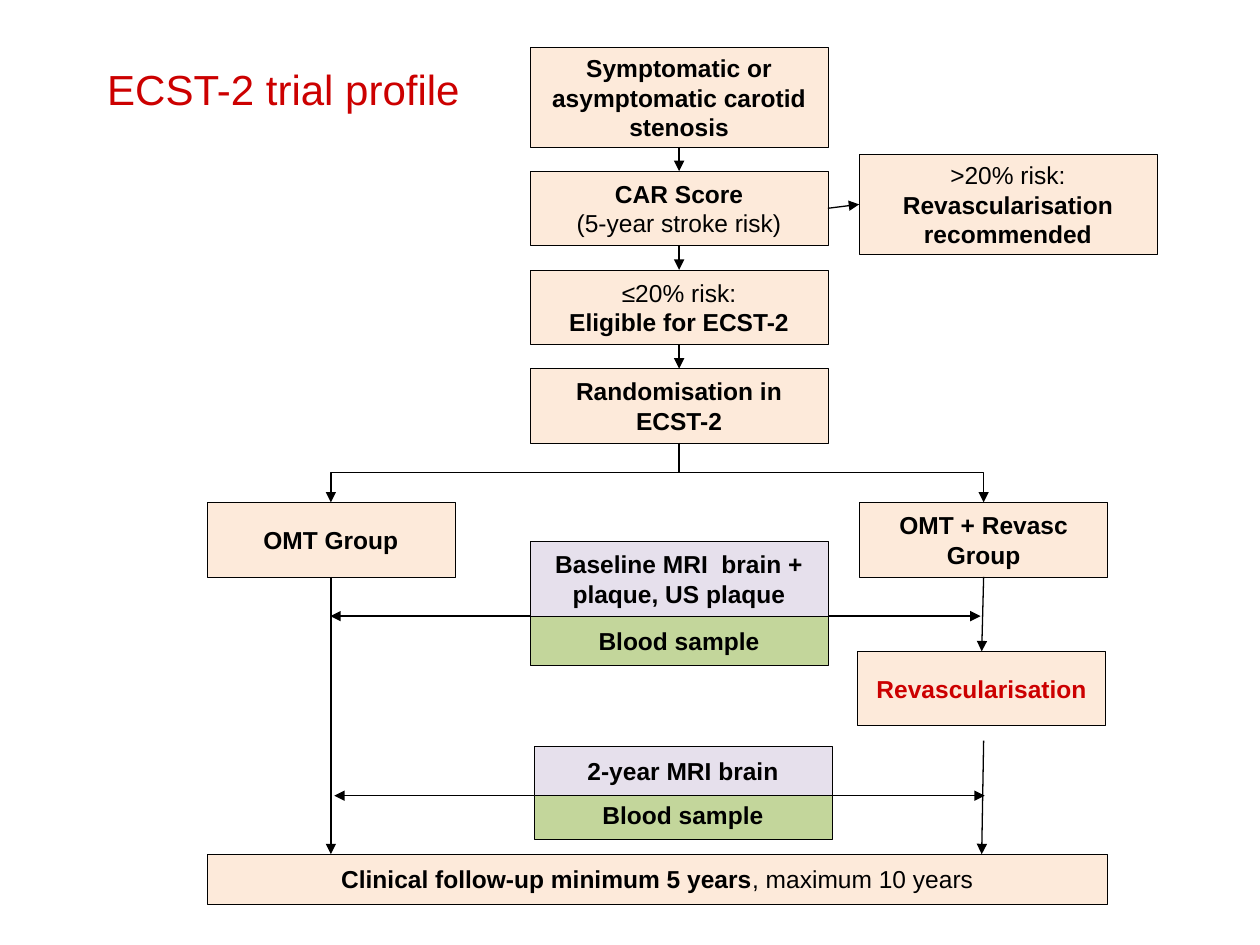
from dataclasses import dataclass

from lxml.etree import SubElement
from pptx import Presentation
from pptx.dml.color import RGBColor
from pptx.enum.shapes import MSO_CONNECTOR, MSO_SHAPE
from pptx.enum.text import MSO_ANCHOR, MSO_AUTO_SIZE, PP_ALIGN
from pptx.oxml.ns import qn
from pptx.util import Cm, Pt


@dataclass(frozen=True)
class Theme:
    """Colours, font and type sizes of the slide."""
    font: str = "Arial"
    title_size: int = 24
    body_size: int = 14
    box_line: float = 0.25
    arrow_line: float = 0.75
    ink: str = "000000"
    accent: str = "CC0000"
    step: str = "FDEADA"
    scan: str = "E6E0EC"
    sample: str = "C3D69B"


@dataclass(frozen=True)
class Box:
    """A rectangle in centimetres."""
    left: float
    top: float
    width: float
    height: float

    @property
    def right(self):
        """Return the right edge."""
        return self.left + self.width

    @property
    def bottom(self):
        """Return the lower edge."""
        return self.top + self.height

    @property
    def center(self):
        """Return the horizontal centre."""
        return self.left + self.width / 2

    @property
    def middle(self):
        """Return the vertical centre."""
        return self.top + self.height / 2

    def lengths(self):
        """Return left, top, width and height as slide lengths."""
        return [Cm(v) for v in (self.left, self.top, self.width, self.height)]


THEME = Theme()


def add_run(p, text, size, color, bold=False):
    """Add one formatted run to a paragraph."""
    r = p.add_run()
    r.text = text
    r.font.name = THEME.font
    r.font.size = Pt(size)
    r.font.bold = bold
    r.font.color.rgb = RGBColor.from_string(color)


def add_process(slide, box, paragraphs, fill=THEME.step, color=THEME.ink):
    """Draw a flow chart box from paragraphs of (text, bold) runs."""
    sp = slide.shapes.add_shape(MSO_SHAPE.FLOWCHART_PROCESS, *box.lengths())
    sp.shadow.inherit = False
    sp.fill.solid()
    sp.fill.fore_color.rgb = RGBColor.from_string(fill)
    sp.line.color.rgb = RGBColor.from_string(THEME.ink)
    sp.line.width = Pt(THEME.box_line)
    tf = sp.text_frame
    tf.word_wrap = True
    tf.vertical_anchor = MSO_ANCHOR.MIDDLE
    for i, runs in enumerate(paragraphs):
        p = tf.add_paragraph() if i else tf.paragraphs[0]
        p.alignment = PP_ALIGN.CENTER
        for text, bold in runs:
            add_run(p, text, THEME.body_size, color, bold)


def add_arrow(slide, x1, y1, x2, y2, kind=MSO_CONNECTOR.STRAIGHT):
    """Draw a connector with an arrowhead at its end."""
    cxn = slide.shapes.add_connector(kind, Cm(x1), Cm(y1), Cm(x2), Cm(y2))
    cxn.line.color.rgb = RGBColor.from_string(THEME.ink)
    cxn.line.width = Pt(THEME.arrow_line)
    SubElement(cxn.line._get_or_add_ln(), qn("a:tailEnd"), type="triangle")
    SubElement(cxn._element.spPr, qn("a:effectLst"))
    return cxn


def add_branch(slide, x1, y1, x2, y2):
    """Draw an elbow arrow that leaves and arrives vertically."""
    cx, cy = (x1 + x2) / 2, (y1 + y2) / 2
    span = abs(x2 - x1) / 2
    side = (y2 - y1) / 2 if x2 < x1 else (y1 - y2) / 2
    cxn = add_arrow(slide, cx - side, cy - span, cx + side, cy + span, MSO_CONNECTOR.ELBOW)
    degrees = 90 if x2 < x1 else 270
    cxn._element.spPr.find(qn("a:xfrm")).set("rot", str(degrees * 60000))


def add_title(slide, box, text):
    """Place and format the title placeholder."""
    sp = slide.shapes.title
    sp.left, sp.top, sp.width, sp.height = box.lengths()
    tf = sp.text_frame
    tf.word_wrap = True
    tf.auto_size = MSO_AUTO_SIZE.NONE
    tf.vertical_anchor = MSO_ANCHOR.TOP
    tf.margin_left = tf.margin_right = tf.margin_top = tf.margin_bottom = 0
    p = tf.paragraphs[0]
    p.alignment = PP_ALIGN.CENTER
    p.line_spacing = 0.9
    add_run(p, text, THEME.title_size, THEME.accent)


def add_screening(slide, box):
    """Draw the column from presentation to randomisation, with its side exit."""
    steps = [
        (2, [[("Symptomatic or asymptomatic carotid stenosis", True)]]),
        (1.5, [[("CAR Score", True)], [("(5-year stroke risk)", False)]]),
        (1.5, [[("≤20% risk:", False)], [("Eligible for ECST-2", True)]]),
        (1.5, [[("Randomisation in ECST-2", True)]]),
    ]
    gap = (box.height - sum(height for height, _ in steps)) / (len(steps) - 1)
    top, cells = box.top, []
    for height, paragraphs in steps:
        cell = Box(box.left, top, box.width, height)
        add_process(slide, cell, paragraphs)
        if cells:
            add_arrow(slide, box.center, cells[-1].bottom, box.center, top)
        cells.append(cell)
        top = cell.bottom + gap
    score = cells[1]
    leave = Box(box.right + 0.63, box.top + 2.16, box.width, 2)
    add_process(slide, leave, [[(">20% risk: ", False), ("Revascularisation recommended", True)]])
    add_arrow(slide, score.right, score.middle, leave.left, leave.middle)


def add_arms(slide, box):
    """Draw the two treatment arms between randomisation and follow-up."""
    width, height = 5, 1.5
    omt = Box(box.left, box.top + 1.2, width, height)
    revasc = Box(box.right - width, omt.top, width, height)
    treatment = Box(revasc.left - 0.04, box.top + 4.2, width, height)
    for arm, name in ((omt, "OMT Group"), (revasc, "OMT + Revasc Group")):
        add_process(slide, arm, [[(name, True)]])
        add_branch(slide, box.left + 9.52, box.top, arm.center, arm.top)
    add_process(slide, treatment, [[("Revascularisation", True)]], color=THEME.accent)
    add_arrow(slide, omt.center, omt.bottom, omt.center, box.bottom)
    add_arrow(slide, revasc.center, revasc.bottom, treatment.center, treatment.top)
    add_arrow(slide, revasc.center, treatment.bottom + 0.3, treatment.center, box.bottom)


def add_assessment(slide, box, scan, scan_height):
    """Draw a scan above a blood sample, with arrows to both arms."""
    y = box.top + scan_height
    add_arrow(slide, box.left, y, box.left - 4.03, y)
    add_arrow(slide, box.right, y, box.right + 3.08, y)
    sample = Box(box.left, box.bottom - 1, box.width, 1)
    add_process(slide, sample, [[("Blood sample", True)]], THEME.sample)
    upper = Box(box.left, box.top, box.width, scan_height)
    add_process(slide, upper, [[(scan, True)]], THEME.scan)


def add_follow_up(slide, box):
    """Draw the closing follow-up bar."""
    runs = [("Clinical follow-up minimum 5 years", True), (", maximum 10 years", False)]
    add_process(slide, box, [runs])


def main():
    """Build the slide and save it."""
    prs = Presentation()
    prs.slide_width, prs.slide_height = Cm(25.4), Cm(19.05)
    slide = prs.slides.add_slide(prs.slide_layouts[5])
    add_title(slide, Box(1.5, 1.4, 8.43, 2.34), "ECST-2 trial profile")
    add_screening(slide, Box(10.69, 0.96, 6, 7.97))
    add_arms(slide, Box(4.17, 8.93, 18.16, 8.29))
    add_assessment(slide, Box(10.69, 10.92, 6, 2.5), "Baseline MRI  brain + plaque, US plaque", 1.5)
    add_assessment(slide, Box(10.77, 15.04, 6, 1.88), "2-year MRI brain", 1)
    add_follow_up(slide, Box(4.17, 17.22, 18.16, 1))
    prs.save("out.pptx")


if __name__ == "__main__":
    main()
